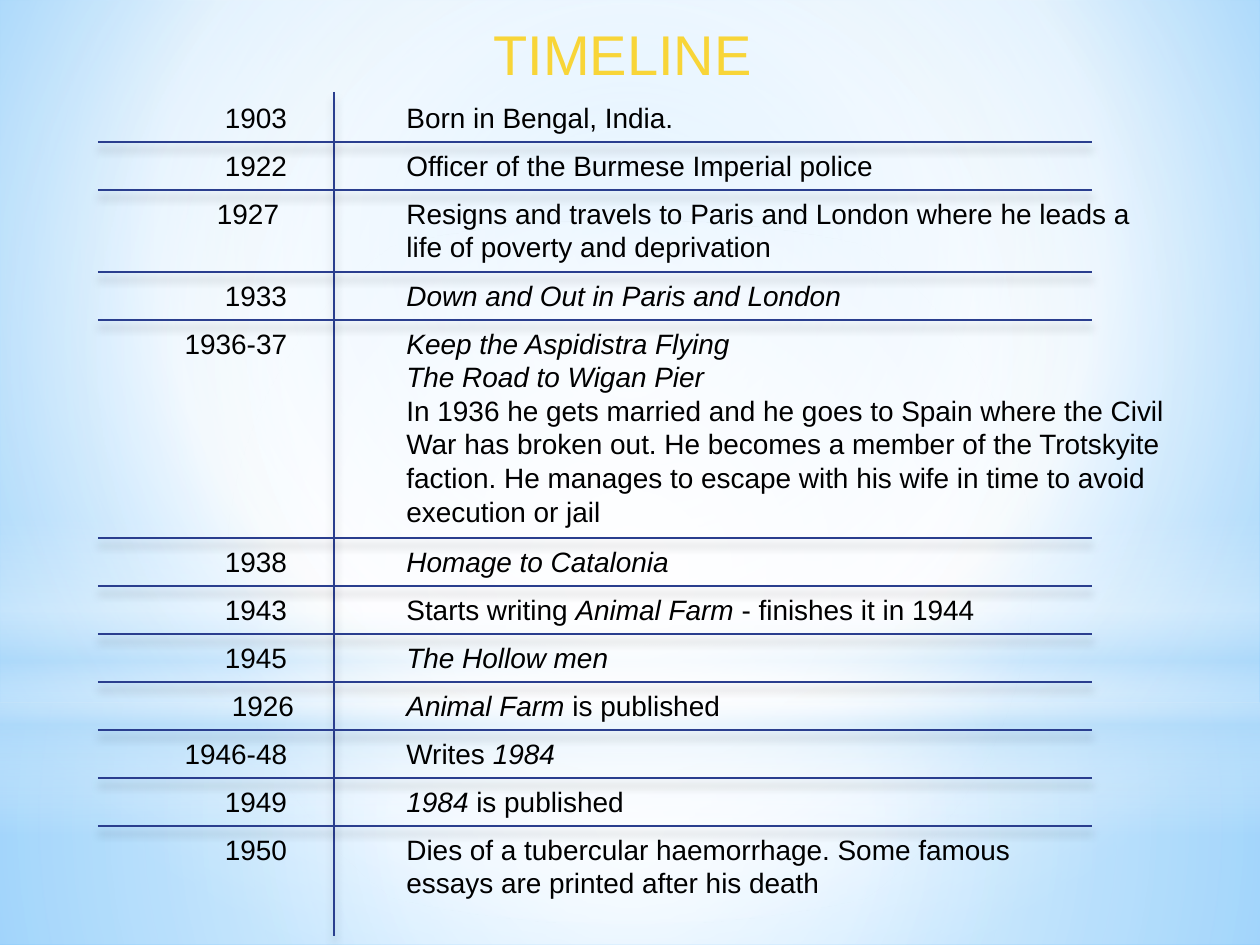
from dataclasses import dataclass
from typing import Optional

from lxml.etree import SubElement
from pptx import Presentation
from pptx.dml.color import RGBColor
from pptx.enum.shapes import MSO_CONNECTOR, MSO_SHAPE
from pptx.enum.text import MSO_AUTO_SIZE, PP_ALIGN
from pptx.oxml import parse_xml
from pptx.oxml.ns import nsdecls, qn
from pptx.util import Emu, Pt

SCALE = 914400 / 126
WIDE, HIGH = 1260, 945
BLUE, BLACK, GOLD = "2A3E8E", "000000", "F8D538"
TOP, STEP, LEAD = 94, 48, 34


def px(count: int) -> Emu:
    return Emu(round(count * SCALE))


def hue(code: str) -> RGBColor:
    return RGBColor.from_string(code)


@dataclass
class Stop:
    place: int
    code: str
    alpha: int = 100


@dataclass
class Blend:
    stops: list[Stop]
    focus: Optional[tuple[int, int, int, int]] = None


@dataclass
class Panel:
    kind: MSO_SHAPE
    top: int
    height: int
    blend: Blend


@dataclass
class Event:
    year: str
    notes: list[str]
    lines: int = 1
    width: int = 713
    inset: int = 20


@dataclass
class Style:
    size: int
    code: str
    align: PP_ALIGN
    inset: int = 13


MID = (50, 50, 50, 50)
BACK = Blend([Stop(0, "9ED5FF"), Stop(60, "FFFFFF"), Stop(100, "5BB9FF")], (20, 10, 20, 60))
PANELS = [
    Panel(MSO_SHAPE.RECTANGLE, 703, 242, Blend(
        [Stop(0, "FFFFFF", 91), Stop(37, "FFFFFF", 76), Stop(100, "B4DCFA", 79)], MID)),
    Panel(MSO_SHAPE.RECTANGLE, 0, 703, Blend(
        [Stop(0, "FFFFFF", 89), Stop(48, "FFFFFF", 62), Stop(100, "B4DCFA", 79)], MID)),
    Panel(MSO_SHAPE.RECTANGLE, 519, 315, Blend(
        [Stop(0, "FFFFFF", 0), Stop(29, "FFFFFF", 30), Stop(45, "B4DCFA", 40),
         Stop(55, "FFFFFF", 26), Stop(65, "B4DCFA", 60), Stop(100, "FFFFFF", 0)])),
    Panel(MSO_SHAPE.OVAL, 221, 703, Blend(
        [Stop(0, "FFFFFF"), Stop(56, "FFFFFF", 0)], MID)),
]
EVENTS = [
    Event("1903", ["Born in Bengal, India."]),
    Event("1922", ["Officer of the Burmese Imperial police"]),
    Event("1927", ["Resigns and travels to Paris and London where he leads a "
                   "life of poverty and deprivation"], 2, 789, 28),
    Event("1933", ["*Down and Out in Paris and London*"]),
    Event("1936-37", ["*Keep the Aspidistra Flying*", "*The Road to Wigan Pier*",
                      "In 1936 he gets married and he goes to Spain where the Civil War "
                      "has broken out. He becomes a member of the Trotskyite faction. He "
                      "manages to escape with his wife in time to avoid execution or jail"],
          6, 828),
    Event("1938", ["*Homage to Catalonia*"]),
    Event("1943", ["Starts writing *Animal Farm* - finishes it in 1944"]),
    Event("1945", ["*The Hollow men*"]),
    Event("1926", ["*Animal Farm* is published"], inset=13),
    Event("1946-48", ["Writes *1984*"]),
    Event("1949", ["*1984* is published"]),
    Event("1950", ["Dies of a tubercular haemorrhage. Some famous essays are "
                   "printed after his death"], 2),
]


def shade(owner, blend: Blend) -> None:
    grad = parse_xml(f'<a:gradFill {nsdecls("a")} rotWithShape="1"><a:gsLst/></a:gradFill>')
    for stop in blend.stops:
        mark = SubElement(grad[0], qn("a:gs"), pos=str(stop.place * 1000))
        tint = SubElement(mark, qn("a:srgbClr"), val=stop.code)
        if stop.alpha < 100:
            SubElement(tint, qn("a:alpha"), val=str(stop.alpha * 1000))
    if blend.focus:
        ring = SubElement(grad, qn("a:path"), path="circle")
        sides = {side: str(part * 1000) for side, part in zip("ltrb", blend.focus)}
        SubElement(ring, qn("a:fillToRect"), **sides)
    else:
        SubElement(grad, qn("a:lin"), ang="5400000", scaled="0")
    plain = owner.find(qn("a:solidFill"))
    owner.replace(plain, grad)


def draw_panel(slide, panel: Panel) -> None:
    shape = slide.shapes.add_shape(panel.kind, 0, px(panel.top), px(WIDE), px(panel.height))
    shape.shadow.inherit = False
    shape.line.fill.background()
    shape.fill.solid()
    shade(shape.element.spPr, panel.blend)


def draw_rule(slide, left: int, top: int, right: int, base: int) -> None:
    rule = slide.shapes.add_connector(
        MSO_CONNECTOR.STRAIGHT, px(left), px(top), px(right), px(base))
    rule.line.color.rgb = hue(BLUE)
    rule.line.width = Pt(1.25)
    effect = SubElement(rule.element.spPr, qn("a:effectLst"))
    cast = SubElement(effect, qn("a:outerShdw"), blurRad=str(Pt(5)), dist=str(Pt(4)),
                      dir="5400000", rotWithShape="0")
    tint = SubElement(cast, qn("a:srgbClr"), val=BLACK)
    SubElement(tint, qn("a:alpha"), val="20000")


def draw_text(slide, left: int, top: int, width: int, height: int,
              notes: list[str], style: Style) -> None:
    frame = slide.shapes.add_textbox(px(left), px(top), px(width), px(height)).text_frame
    setup = {"word_wrap": True, "auto_size": MSO_AUTO_SIZE.SHAPE_TO_FIT_TEXT,
             "margin_right": px(style.inset)}
    for name, value in setup.items():
        setattr(frame, name, value)
    for count, note in enumerate(notes):
        para = frame.add_paragraph() if count else frame.paragraphs[0]
        para.alignment = style.align
        for part, words in enumerate(note.split("*")):
            if not words:
                continue
            run = para.add_run()
            run.text = words
            looks = {"name": "Arial", "size": Pt(style.size), "italic": part % 2 == 1}
            for name, value in looks.items():
                setattr(run.font, name, value)
            run.font.color.rgb = hue(style.code)


def main() -> None:
    deck = Presentation()
    deck.slide_width, deck.slide_height = px(WIDE), px(HIGH)
    slide = deck.slides.add_slide(deck.slide_layouts[6])
    slide.background.fill.solid()
    shade(slide.element.xpath(".//p:bgPr")[0], BACK)
    for panel in PANELS:
        draw_panel(slide, panel)
    draw_text(slide, 36, 13, 1174, 87, ["TIMELINE"], Style(32, GOLD, PP_ALIGN.CENTER))
    draw_rule(slide, 334, 92, 334, 936)
    top = TOP
    for event in EVENTS:
        height = STEP + LEAD * (event.lines - 1)
        if top > TOP:
            draw_rule(slide, 98, top, 1092, top)
        draw_text(slide, 150, top, 157, 47, [event.year],
                  Style(16, BLACK, PP_ALIGN.RIGHT, event.inset))
        draw_text(slide, 394, top, event.width, height - 1, event.notes,
                  Style(16, BLACK, PP_ALIGN.LEFT))
        top += height
    deck.save("out.pptx")


if __name__ == "__main__":
    main()
